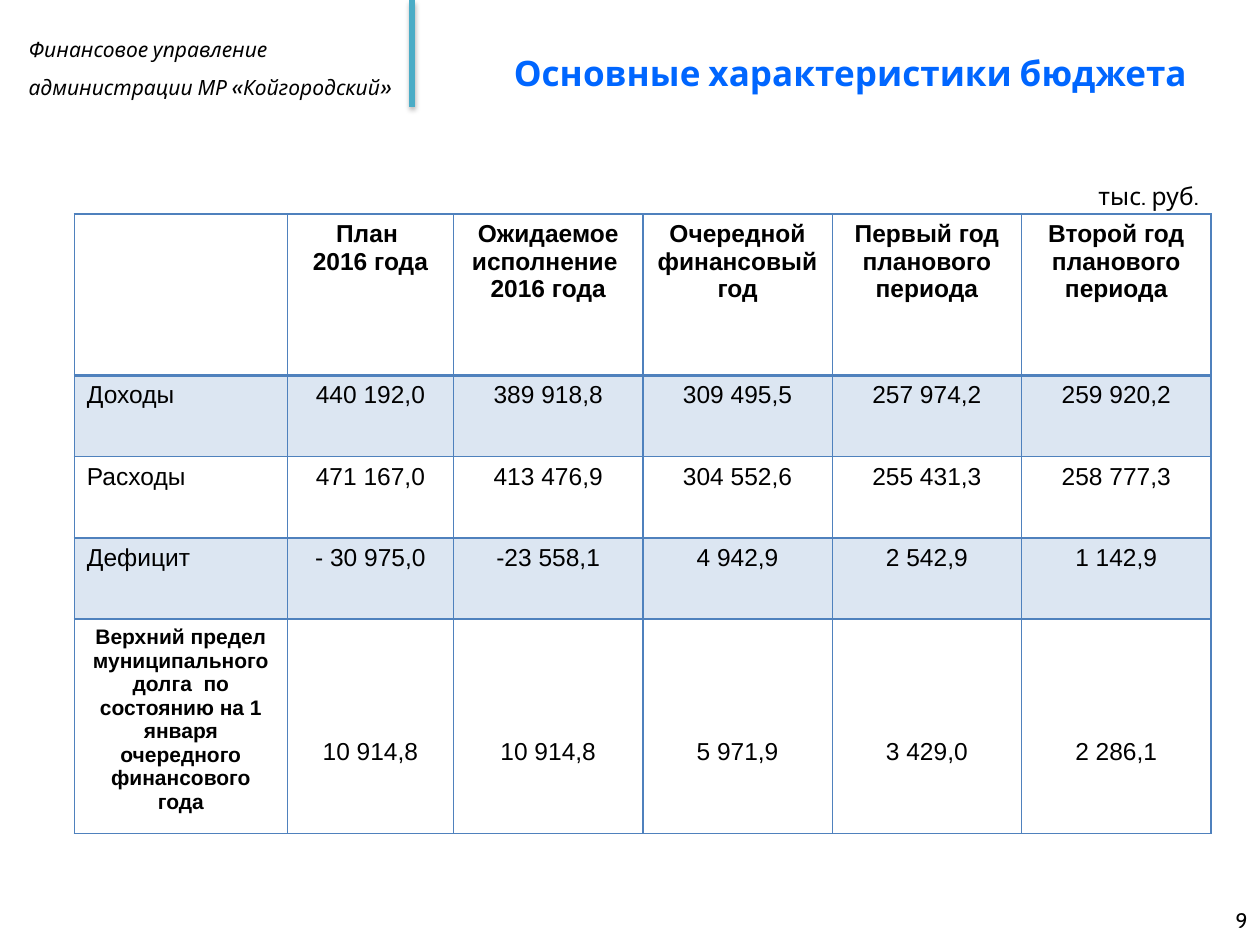
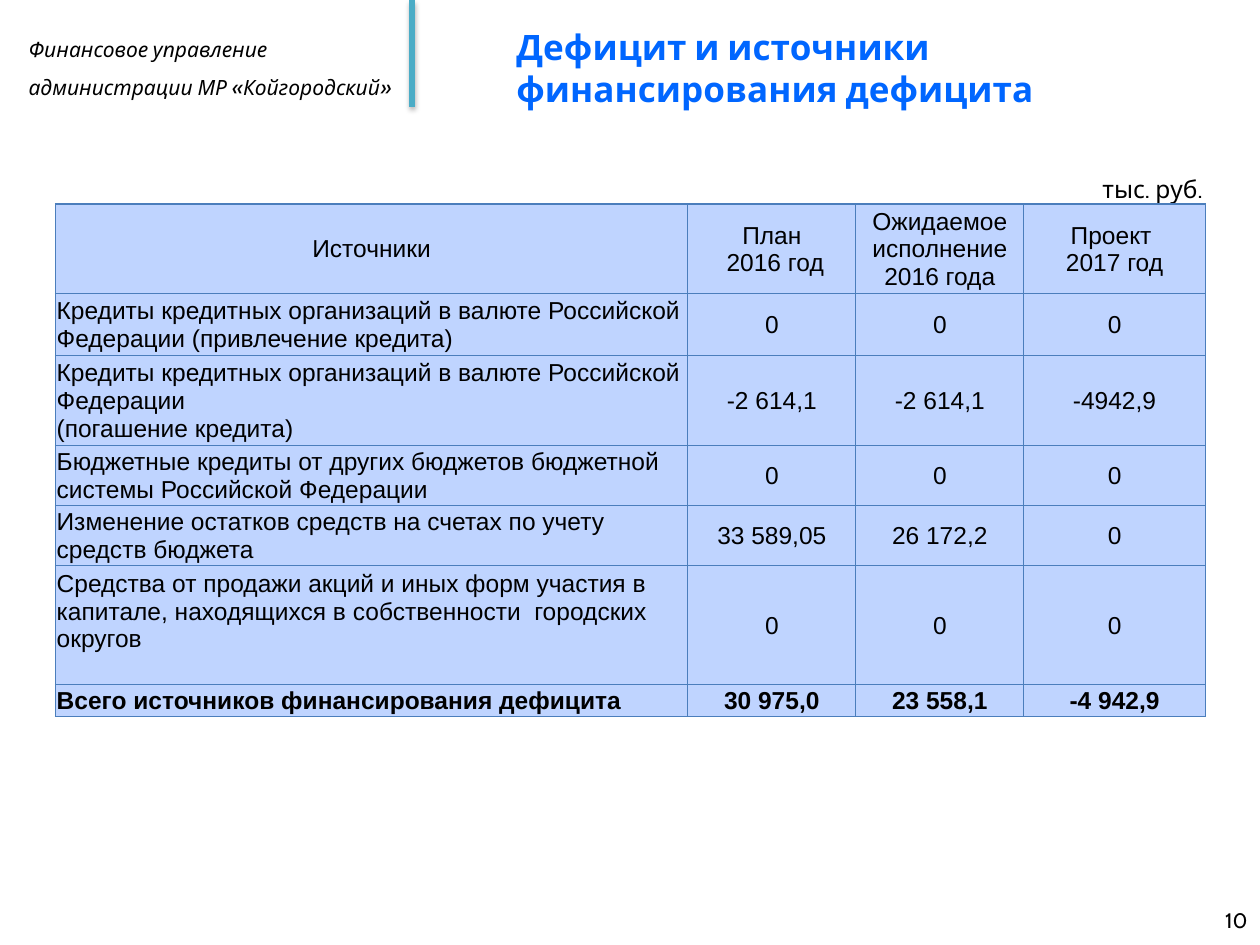
from lxml import etree
from pptx import Presentation
from pptx.dml.color import RGBColor as RGB
from pptx.enum.shapes import MSO_CONNECTOR as LINK
from pptx.enum.text import MSO_ANCHOR as ANCHOR, PP_ALIGN as ALIGN
from pptx.oxml import parse_xml
from pptx.util import Pt

BLACK = RGB(0x00, 0x00, 0x00)
BLUE = RGB(0x00, 0x66, 0xFF)
TEAL = RGB(0x4B, 0xAC, 0xC6)
STEEL = RGB(0x4F, 0x81, 0xBD)
EDGE = RGB(0x4B, 0x7E, 0xBC)
PALE = RGB(0xDC, 0xE6, 0xF2)
SKY = RGB(0xBF, 0xD4, 0xFF)
NS = 'xmlns:a="http://schemas.openxmlformats.org/drawingml/2006/main"'


def write(frame, text, size, face="Cabin", color=BLACK, bold=False,
          italic=False, align=ALIGN.LEFT, space=None):
    for i, line in enumerate(text.split("\n")):
        para = frame.paragraphs[0] if i == 0 else frame.add_paragraph()
        para.alignment = align
        if space:
            para.line_spacing = space
        run = para.add_run()
        run.text = line
        font = run.font
        font.name, font.size, font.color.rgb = face, Pt(size), color
        font.bold, font.italic = bold, italic


def grid(slide, left, top, widths, heights, rows, fills, strong, edge, thick):
    """Add a table; strong is the index of its bold row."""
    table = slide.shapes.add_table(
        len(rows), len(widths), Pt(left), Pt(top),
        Pt(sum(widths)), Pt(sum(heights))).table
    for col, width in zip(table.columns, widths):
        col.width = Pt(width)
    for r, row in enumerate(rows):
        table.rows[r].height = Pt(heights[r])
        for c, text in enumerate(row):
            cell = table.cell(r, c)
            side = ALIGN.LEFT if c == 0 and r > 0 else ALIGN.CENTER
            if text:
                write(cell.text_frame, text, 14, "Arial",
                      bold=r == strong, align=side)
            # Borders go before the fill
            props = cell._tc.get_or_add_tcPr()
            for name, first in (("L", 1), ("R", 1), ("T", r != 1), ("B", r != 0)):
                width = Pt(thick[1] if first else thick[0])
                props.append(parse_xml(
                    f'<a:ln{name} {NS} w="{width}"><a:solidFill>'
                    f'<a:srgbClr val="{edge}"/></a:solidFill></a:ln{name}>'))
            if fills[r] is None:
                cell.fill.background()
            else:
                cell.fill.solid()
                cell.fill.fore_color.rgb = fills[r]
    return table


deck = Presentation()
deck.slide_width, deck.slide_height = Pt(720), Pt(540)

# Shared parts: owner, rule, title, unit and page number
pages = [
    ("Основные характеристики бюджета", (286.5, 0, 433.5, 83), (620.6, 100), "9"),
    ("Дефицит и источники финансирования дефицита", (288, 2, 351, 73),
     (622.8, 95.8), "10"),
]
slides = []
for title, place, unit, number in pages:
    slide = deck.slides.add_slide(deck.slide_layouts[6])
    slides.append(slide)

    rule = slide.shapes.add_connector(LINK.STRAIGHT, Pt(235.5), 0, Pt(235.5), Pt(61))
    rule.line.color.rgb, rule.line.width = TEAL, Pt(3)
    rule._element.spPr.append(etree.fromstring(
        f'<a:effectLst {NS}><a:outerShdw blurRad="{Pt(3.1)}" dist="{Pt(1.8)}" '
        'dir="5400000" rotWithShape="0"><a:srgbClr val="000000">'
        '<a:alpha val="35000"/></a:srgbClr></a:outerShdw></a:effectLst>'))

    owner = "Финансовое управление\nадминистрации МР «Койгородский»"
    parts = [
        ((9.2, 10, 226, 51), owner, ANCHOR.TOP, True,
         dict(size=12, italic=True, space=1.5)),
        (place, title, ANCHOR.MIDDLE, True, dict(size=20, color=BLUE, bold=True)),
        ((*unit, 73.4, 24.2), "тыс. руб.", ANCHOR.TOP, False, dict(size=14)),
        ((552, 511.2, 168, 28.8), number, ANCHOR.MIDDLE, True,
         dict(size=12, align=ALIGN.RIGHT)),
    ]
    for box, text, anchor, wrap, style in parts:
        frame = slide.shapes.add_textbox(*map(Pt, box)).text_frame
        frame.word_wrap, frame.vertical_anchor = wrap, anchor
        write(frame, text, **style)

# Budget figures
rows = [
    ["", "План \n2016 года", "Ожидаемое исполнение \n2016 года",
     "Очередной финансовый год", "Первый год\nпланового периода",
     "Второй год планового периода"],
    ["Доходы", "440 192,0", "389 918,8", "309 495,5", "257 974,2", "259 920,2"],
    ["Расходы", "471 167,0", "413 476,9", "304 552,6", "255 431,3", "258 777,3"],
    ["Дефицит", "- 30 975,0", "-23 558,1", "4 942,9", "2 542,9", "1 142,9"],
    ["", "10 914,8", "10 914,8", "5 971,9", "3 429,0", "2 286,1"],
]
table = grid(slides[0], 42.5, 122.4, [121.7, 95] + [108.2] * 4,
             [92, 46.5, 46.5, 46.5, 115], rows,
             [None, PALE, None, PALE, None], 0, STEEL, (2, 1))
debt = ("Верхний предел муниципального долга  по состоянию на 1 января "
        "очередного финансового года")
write(table.cell(4, 0).text_frame, debt, 12, "Arial", bold=True, align=ALIGN.CENTER)
for c in range(1, 6):
    table.cell(4, c).margin_top = Pt(68)

# Sources of deficit funding
rows = [
    ["Источники", "План\n 2016 год", "Ожидаемое исполнение 2016 года",
     "Проект \n2017 год"],
    ["Кредиты кредитных организаций в валюте Российской Федерации "
     "(привлечение кредита)", "0", "0", "0"],
    ["Кредиты кредитных организаций в валюте Российской Федерации\n"
     "(погашение кредита)", "-2 614,1", "-2 614,1", "-4942,9"],
    ["Бюджетные кредиты от других бюджетов бюджетной системы "
     "Российской Федерации", "0", "0", "0"],
    ["Изменение остатков средств на счетах по учету средств бюджета",
     "33 589,05", "26 172,2", "0"],
    ["Средства от продажи акций и иных форм участия в капитале, "
     "находящихся в собственности  городских округов", "0", "0", "0"],
    ["Всего источников финансирования дефицита", "30 975,0", "23 558,1", "-4 942,9"],
]
table = grid(slides[1], 31.7, 116.6, [361.4, 96, 96, 103.7],
             [51, 35.4, 51.4, 34.3, 34.3, 68, 18.3], rows,
             [SKY] * 7, 6, EDGE, (0.75, 0.75))
for cell in table.iter_cells():
    cell.vertical_anchor = ANCHOR.MIDDLE
    cell.margin_left = cell.margin_right = cell.margin_top = Pt(0.7)
    cell.margin_bottom = 0
table.cell(5, 0).margin_bottom = Pt(16)

deck.save("out.pptx")
